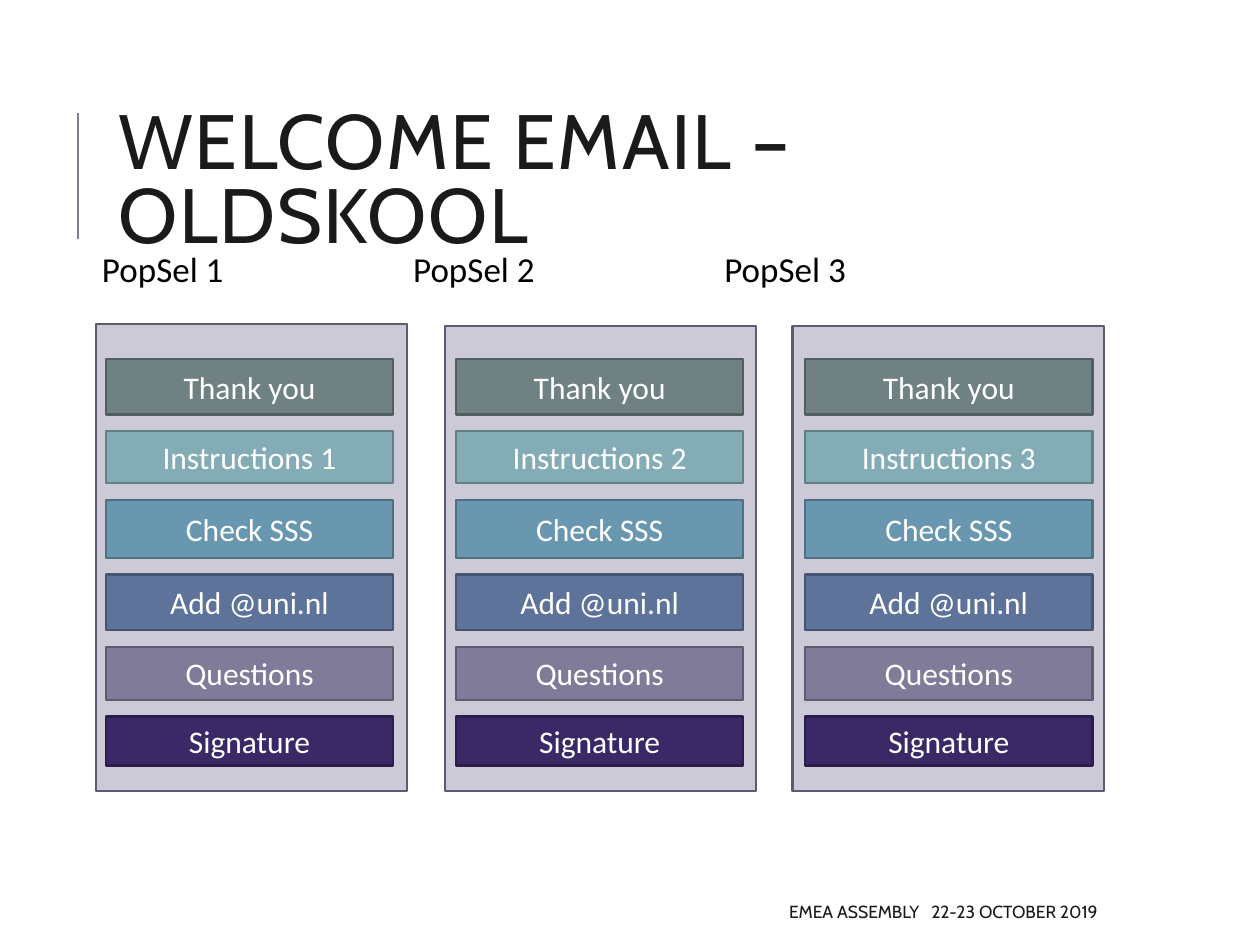
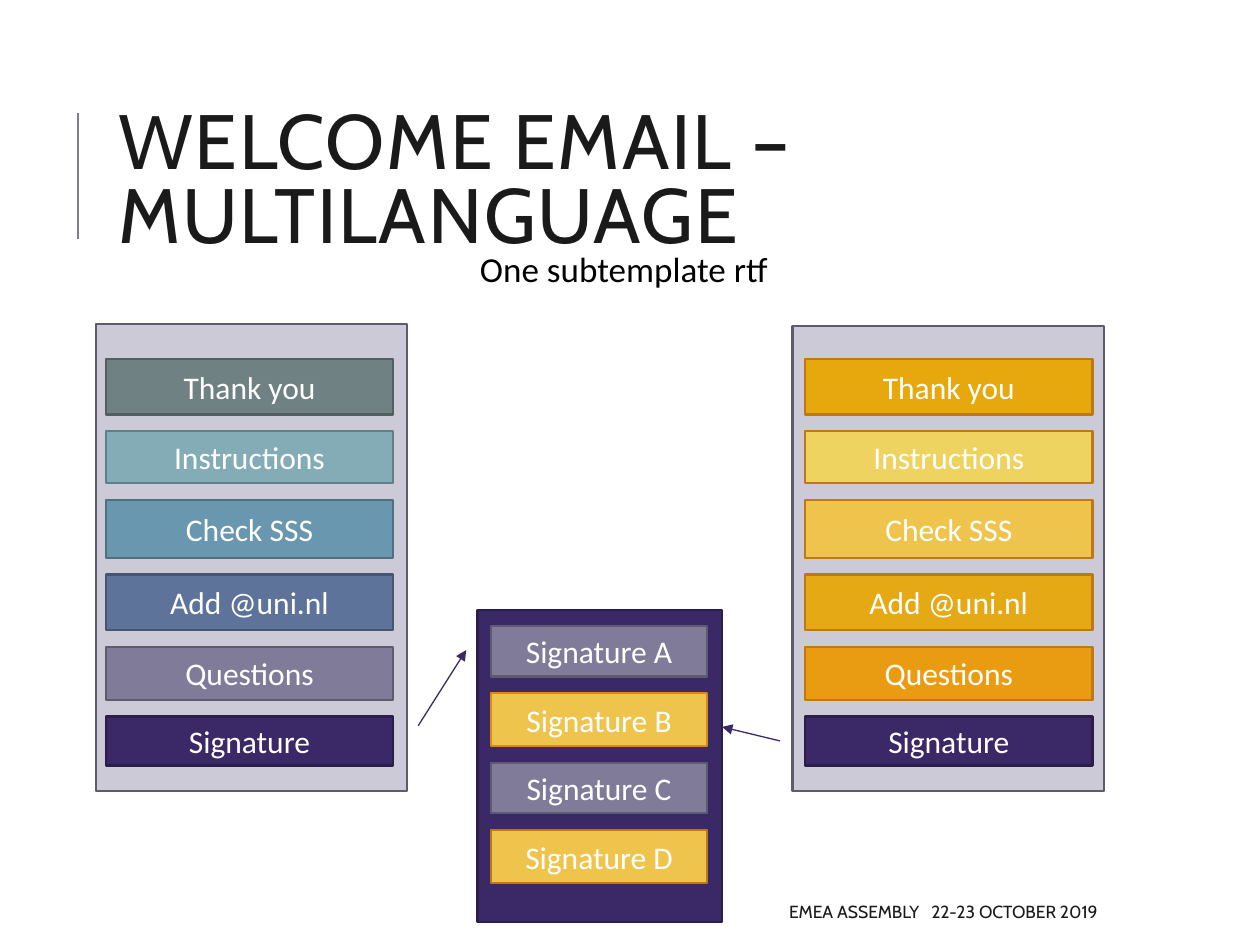
"""Build two slides comparing the layouts of a welcome email."""
from lxml import etree
from pptx import Presentation
from pptx.dml.color import RGBColor
from pptx.enum.shapes import MSO_CONNECTOR, MSO_SHAPE
from pptx.enum.text import MSO_ANCHOR, MSO_AUTO_SIZE, PP_ALIGN
from pptx.oxml.ns import qn
from pptx.util import Pt

RECTANGLE = MSO_SHAPE.RECTANGLE
STRAIGHT = MSO_CONNECTOR.STRAIGHT
TOP, MIDDLE = MSO_ANCHOR.TOP, MSO_ANCHOR.MIDDLE
LEFT, CENTER, RIGHT = PP_ALIGN.LEFT, PP_ALIGN.CENTER, PP_ALIGN.RIGHT
NO_AUTOFIT = MSO_AUTO_SIZE.NONE

WHITE = RGBColor(0xFF, 0xFF, 0xFF)
BLACK = RGBColor(0x00, 0x00, 0x00)
INK = RGBColor(0x1A, 0x1A, 0x1A)
LILAC = RGBColor(0xCC, 0xCA, 0xD6)
MAUVE = RGBColor(0x7F, 0x7B, 0x99)
MAUVE_EDGE = RGBColor(0x5E, 0x5B, 0x71)
SLATE = RGBColor(0x6F, 0x81, 0x83)
SLATE_EDGE = RGBColor(0x52, 0x5F, 0x61)
TEAL = RGBColor(0x84, 0xAC, 0xB6)
TEAL_EDGE = RGBColor(0x62, 0x7F, 0x87)
BLUE = RGBColor(0x69, 0x97, 0xAF)
BLUE_EDGE = RGBColor(0x4E, 0x70, 0x81)
INDIGO = RGBColor(0x5D, 0x73, 0x9A)
INDIGO_EDGE = RGBColor(0x45, 0x55, 0x72)
PURPLE = RGBColor(0x3B, 0x28, 0x67)
PURPLE_EDGE = RGBColor(0x2C, 0x1E, 0x4C)
GOLD = RGBColor(0xE6, 0xA8, 0x0C)
LEMON = RGBColor(0xEE, 0xD3, 0x60)
HONEY = RGBColor(0xEE, 0xC4, 0x4C)
OCHRE = RGBColor(0xE4, 0xA9, 0x14)
ORANGE = RGBColor(0xE9, 0x9C, 0x11)
AMBER_EDGE = RGBColor(0xBF, 0x79, 0x13)
BRIGHT_EDGE = RGBColor(0xD9, 0x8A, 0x15)

COOL = [(SLATE, SLATE_EDGE), (TEAL, TEAL_EDGE), (BLUE, BLUE_EDGE),
        (INDIGO, INDIGO_EDGE), (MAUVE, MAUVE_EDGE), (PURPLE, PURPLE_EDGE)]
WARM = [(fill, AMBER_EDGE) for fill in (GOLD, LEMON, HONEY, OCHRE, ORANGE)] + [COOL[-1]]

TITLE_FONT, BODY_FONT = "Cabin", "Calibri"
BAR_GAP = 9.6
PART_TOP = 205.2
PART_HEIGHTS = [31.7, 29.5, 33.1, 31.7, 30.2, 28.1]
SIGNATURE_HEIGHTS = [28.8, 30.2, 28.8, 30.2]
PANEL_WIDTH, PANEL_BOTTOM, BAR_WIDTH = 177.8, 452.2, 164.2
COLUMNS = [(54.7, 185, 60.5), (254.2, 186.5, 260.6), (452.9, 186.5, 460.1)]


def write(shape, text, size=18, font=BODY_FONT, color=WHITE, align=CENTER,
          anchor=MIDDLE, leading=None, spacing=None, inset=None, tabs=()):
    """Put formatted text into a shape."""
    frame = shape.text_frame
    frame.word_wrap = True
    frame.auto_size = NO_AUTOFIT
    frame.vertical_anchor = anchor
    if inset is not None:
        frame.margin_left = frame.margin_right = Pt(inset)
        frame.margin_top = frame.margin_bottom = Pt(inset)
    paragraph = frame.paragraphs[0]
    paragraph.alignment = align
    if leading:
        paragraph.line_spacing = leading
    run = paragraph.add_run()
    run.text = text
    run.font.size = Pt(size)
    run.font.name = font
    run.font.color.rgb = color
    if spacing:
        run.font._element.set("spc", str(spacing))
    if tabs:
        stops = etree.SubElement(paragraph._p.get_or_add_pPr(), qn("a:tabLst"))
        for stop in tabs:
            etree.SubElement(stops, qn("a:tab"), pos=str(Pt(stop)), algn="l")


class Deck:
    """Hold the shared style and the current slide."""

    def __init__(self):
        """Start an empty 4:3 presentation."""
        self.presentation = Presentation()
        self.presentation.slide_width = Pt(720)
        self.presentation.slide_height = Pt(540)
        self.slide = None

    def start_slide(self, title):
        """Add a slide with its title, accent line and footer."""
        self.slide = self.presentation.slides.add_slide(self.presentation.slide_layouts[5])
        self.line((44.6, 136.8), (44.6, 64.8), MAUVE, 1.5)
        heading = self.slide.shapes.title
        heading.left, heading.top = Pt(60.5), Pt(46.1)
        heading.width, heading.height = Pt(589), Pt(118.1)
        write(heading, title, size=44, font=TITLE_FONT, color=INK, align=LEFT,
              leading=0.8, spacing=100)
        for footer, left, right in [("EMEA ASSEMBLY", 285.8, 532.4),
                                    ("22-23 OCTOBER 2019", 510, 634.3)]:
            self.label(footer, left, 509.8, right - left, 21.6, size=10,
                       font=TITLE_FONT, color=INK, align=RIGHT)

    def label(self, text, left, top, width, height, **style):
        """Add a text box."""
        box = self.slide.shapes.add_textbox(Pt(left), Pt(top), Pt(width), Pt(height))
        write(box, text, **style)

    def caption(self, text, tabs):
        """Add the line below the title, set out with tab stops."""
        self.label(text, 54.7, 142.6, 576, 28.1, size=20, color=BLACK, align=LEFT,
                   anchor=TOP, leading=0.8, inset=3.6, tabs=tabs)

    def box(self, left, top, width, height, fill, edge, text=None):
        """Add an outlined rectangle, with text if given."""
        box = self.slide.shapes.add_shape(RECTANGLE, Pt(left), Pt(top), Pt(width), Pt(height))
        box.shadow.inherit = False
        box.fill.solid()
        box.fill.fore_color.rgb = fill
        box.line.color.rgb = edge
        box.line.width = Pt(1.25)
        if text:
            write(box, text)

    def stack(self, left, top, width, heights, texts, colors):
        """Add bars below each other with equal gaps."""
        for height, text, (fill, edge) in zip(heights, texts, colors):
            self.box(left, top, width, height, fill, edge, text)
            top += height + BAR_GAP

    def email(self, column, instructions, colors):
        """Add one email panel with its six parts."""
        panel_left, panel_top, bar_left = COLUMNS[column]
        self.box(panel_left, panel_top, PANEL_WIDTH, PANEL_BOTTOM - panel_top,
                 LILAC, MAUVE_EDGE)
        parts = ["Thank you", instructions, "Check SSS", "Add @uni.nl",
                 "Questions", "Signature"]
        self.stack(bar_left, PART_TOP, BAR_WIDTH, PART_HEIGHTS, parts, colors)

    def line(self, start, end, color, width, arrow=False):
        """Add a straight line, with an arrowhead at its end if asked."""
        line = self.slide.shapes.add_connector(STRAIGHT, *map(Pt, start + end))
        line.line.color.rgb = color
        line.line.width = Pt(width)
        if arrow:
            etree.SubElement(line.line._get_or_add_ln(), qn("a:tailEnd"), type="triangle")
        etree.SubElement(line._element.spPr, qn("a:effectLst"))


def main():
    """Build and save the deck."""
    deck = Deck()

    deck.start_slide("WELCOME EMAIL – OLDSKOOL")
    deck.caption("PopSel 1\tPopSel 2\tPopSel 3", [177.8, 355.6])
    for column in range(3):
        deck.email(column, f"Instructions {column + 1}", COOL)

    deck.start_slide("WELCOME EMAIL – MULTILANGUAGE")
    deck.caption("\tOne subtemplate rtf", [216])
    for column, colors in [(0, COOL), (2, WARM)]:
        deck.email(column, "Instructions", colors)
    deck.box(272.9, 348.5, 139.7, 178.6, PURPLE, PURPLE_EDGE)
    deck.stack(280.8, 357.8, 123.1, SIGNATURE_HEIGHTS,
               [f"Signature {letter}" for letter in "ABCD"],
               [(MAUVE, MAUVE_EDGE), (HONEY, BRIGHT_EDGE),
                (MAUVE, MAUVE_EDGE), (HONEY, AMBER_EDGE)])
    for start, end in [((239, 414.7), (266.4, 371.5)), ((445.7, 423.4), (412.6, 415.4))]:
        deck.line(start, end, PURPLE, 0.75, arrow=True)

    deck.presentation.save("out.pptx")


if __name__ == "__main__":
    main()
